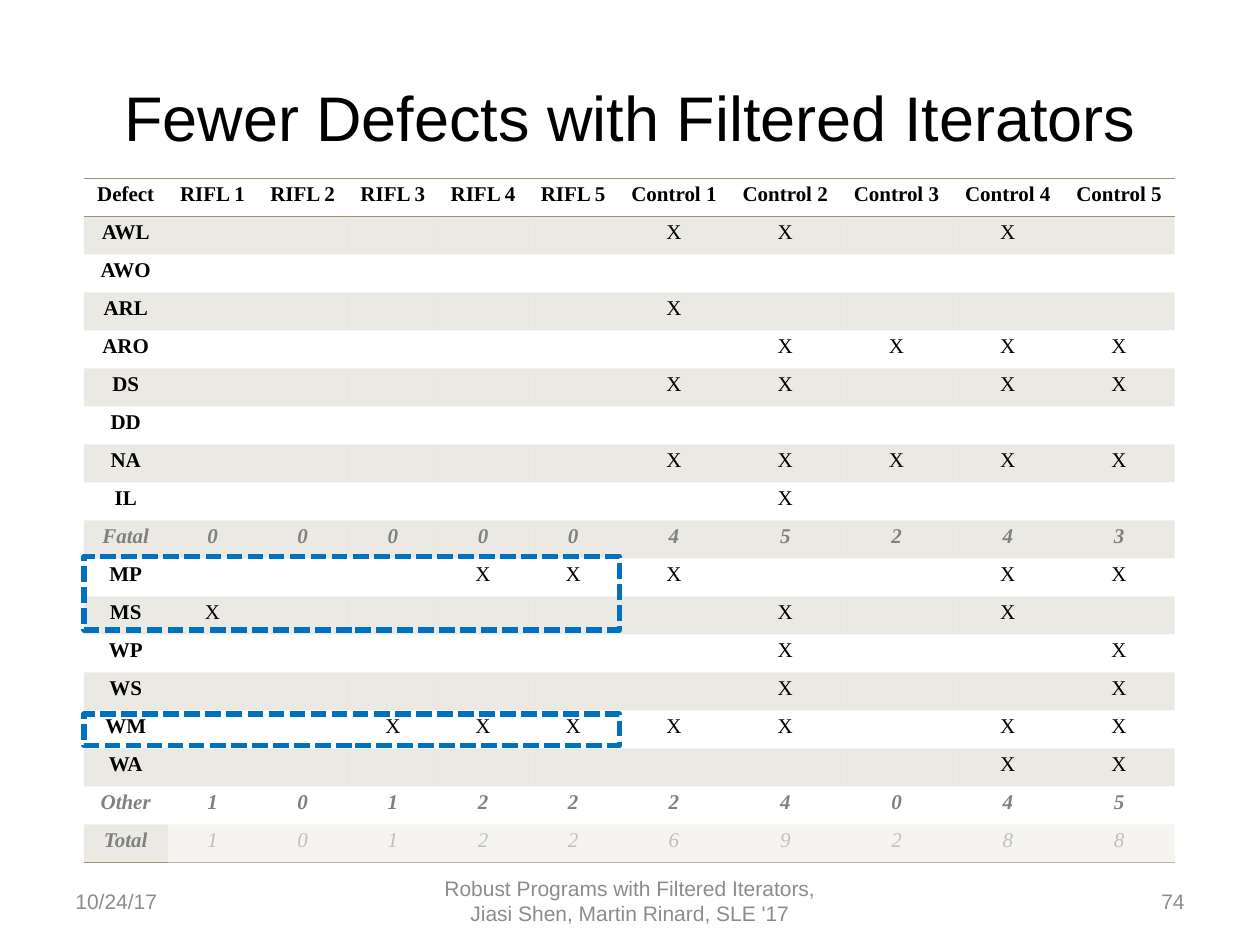
from pptx import Presentation
from pptx.dml.color import RGBColor
from pptx.enum.dml import MSO_LINE
from pptx.enum.shapes import MSO_SHAPE
from pptx.enum.text import MSO_ANCHOR, PP_ALIGN
from pptx.oxml import parse_xml
from pptx.oxml.ns import nsdecls, qn
from pptx.util import Pt

LEFT, CENTER, RIGHT = PP_ALIGN.LEFT, PP_ALIGN.CENTER, PP_ALIGN.RIGHT
MIDDLE = MSO_ANCHOR.MIDDLE
RECTANGLE = MSO_SHAPE.RECTANGLE
SQUARE_DOT = MSO_LINE.SQUARE_DOT
TITLE_ONLY = 5
PLAIN_TABLE_STYLE = "{2D5ABB26-0587-4C30-8999-92F81FD0307C}"

COLORS = {
    "text": "000000",
    "footer": "8C8C8C",
    "summary": "808080",
    "tan": "9E9273",
    "highlight": "0070C0",
    "veil": "FFFFFF",
}

HEADERS = (
    ["Defect"]
    + [f"RIFL {number}" for number in range(1, 6)]
    + [f"Control {number}" for number in range(1, 6)]
)
SUMMARIES = ("Fatal", "Other", "Total")
RESULTS = [
    ("AWL", ".....XX.X."),
    ("AWO", ".........."),
    ("ARL", ".....X...."),
    ("ARO", "......XXXX"),
    ("DS", ".....XX.XX"),
    ("DD", ".........."),
    ("NA", ".....XXXXX"),
    ("IL", "......X..."),
    ("Fatal", "0000045243"),
    ("MP", "...XXX..XX"),
    ("MS", "X.....X.X."),
    ("WP", "......X..X"),
    ("WS", "......X..X"),
    ("WM", "..XXXXX.XX"),
    ("WA", "........XX"),
    ("Other", "1012224045"),
    ("Total", "1012269288"),
]
COLUMN_WIDTHS = [47.7] + [51.55] * 5 + [63.6] * 5
ROW_HEIGHT = 21.72


def color(name):
    return RGBColor.from_string(COLORS[name])


def write_text(frame, text, size=12, font="Arial", color_name="text",
               bold=False, italic=False, align=CENTER):
    paragraph = frame.paragraphs[0]
    paragraph.alignment = align
    if not text:
        paragraph._p.get_or_add_endParaRPr().set("sz", str(size * 100))
        return
    run = paragraph.add_run()
    run.text = text
    run.font.size = Pt(size)
    run.font.name = font
    run.font.bold = bold
    run.font.italic = italic
    run.font.color.rgb = color(color_name)


def fill_translucent(fill, properties, color_name, percent):
    fill.solid()
    fill.fore_color.rgb = color(color_name)
    for element in properties.iter(qn("a:srgbClr")):
        element.append(parse_xml(
            f'<a:alpha {nsdecls("a")} val="{percent * 1000}"/>'))


def add_border(cell, tag):
    cell._tc.get_or_add_tcPr().insert(0, parse_xml(
        f'<a:{tag} {nsdecls("a")} w="12700"><a:solidFill>'
        f'<a:srgbClr val="{COLORS["tan"]}"/></a:solidFill></a:{tag}>'))


def place_title(slide, left, top, width, height):
    title = slide.shapes.title
    title.left, title.top = Pt(left), Pt(top)
    title.width, title.height = Pt(width), Pt(height)
    title.text_frame.vertical_anchor = MIDDLE
    write_text(title.text_frame, "Fewer Defects with Filtered Iterators", size=36)


def add_footer(slide, left, top, width, height):
    side_width, center_width = 168, 228
    parts = [
        ("10/24/17", left, side_width, LEFT),
        ("Robust Programs with Filtered Iterators, Jiasi Shen, Martin Rinard, SLE '17",
         left + (width - center_width) / 2, center_width, CENTER),
        ("74", left + width - side_width, side_width, RIGHT),
    ]
    for text, part_left, part_width, align in parts:
        box = slide.shapes.add_textbox(Pt(part_left), Pt(top), Pt(part_width), Pt(height))
        box.text_frame.word_wrap = True
        box.text_frame.vertical_anchor = MIDDLE
        write_text(box.text_frame, text, color_name="footer", align=align)


def add_defect_table(slide, left, top):
    rows = [HEADERS] + [
        [label] + list(marks.replace(".", " ")) for label, marks in RESULTS]
    frame = slide.shapes.add_table(
        len(rows), len(HEADERS), Pt(left), Pt(top),
        Pt(sum(COLUMN_WIDTHS)), Pt(ROW_HEIGHT * len(rows)))
    table = frame.table
    table._tbl.tblPr.find(qn("a:tableStyleId")).text = PLAIN_TABLE_STYLE
    for column, width in zip(table.columns, COLUMN_WIDTHS):
        column.width = Pt(width)
    for row_index, values in enumerate(rows):
        table.rows[row_index].height = Pt(ROW_HEIGHT)
        is_header = row_index == 0
        is_last = row_index == len(rows) - 1
        is_summary = values[0] in SUMMARIES
        for column_index, value in enumerate(values):
            cell = table.cell(row_index, column_index)
            cell.margin_left = cell.margin_right = Pt(5)
            cell.margin_top = cell.margin_bottom = Pt(2.6)
            is_bold = is_header or column_index == 0 or (is_summary and not is_last)
            write_text(cell.text_frame, value.strip(), font="Times New Roman",
                       color_name="summary" if is_summary else "text",
                       bold=is_bold, italic=is_summary)
            if row_index % 2 or is_last:
                fill_translucent(cell.fill, cell._tc.tcPr, "tan", 20)
            else:
                cell.fill.background()
            if is_header or is_last:
                add_border(cell, "lnB")
            if is_header:
                add_border(cell, "lnT")


def add_rectangle(slide, left, top, width, height):
    shape = slide.shapes.add_shape(RECTANGLE, Pt(left), Pt(top), Pt(width), Pt(height))
    shape.shadow.inherit = False
    return shape


def add_highlight(slide, left, top, width, height):
    shape = add_rectangle(slide, left, top, width, height)
    shape.fill.background()
    shape.line.color.rgb = color("highlight")
    shape.line.width = Pt(3)
    shape.line.dash_style = SQUARE_DOT


def add_veil(slide, left, top, width, height):
    shape = add_rectangle(slide, left, top, width, height)
    shape.line.fill.background()
    fill_translucent(shape.fill, shape._element.spPr, "veil", 50)


def main():
    presentation = Presentation()
    presentation.slide_width, presentation.slide_height = Pt(720), Pt(540)
    slide = presentation.slides.add_slide(presentation.slide_layouts[TITLE_ONLY])
    place_title(slide, 36, 21.6, 648, 90)
    add_footer(slide, 36, 500.5, 648, 28.75)
    add_defect_table(slide, 48, 102)
    add_highlight(slide, 48, 408, 306, 18)
    add_highlight(slide, 48, 318, 306, 42)
    add_veil(slide, 96, 468, 576, 25)
    presentation.save("out.pptx")


if __name__ == "__main__":
    main()
